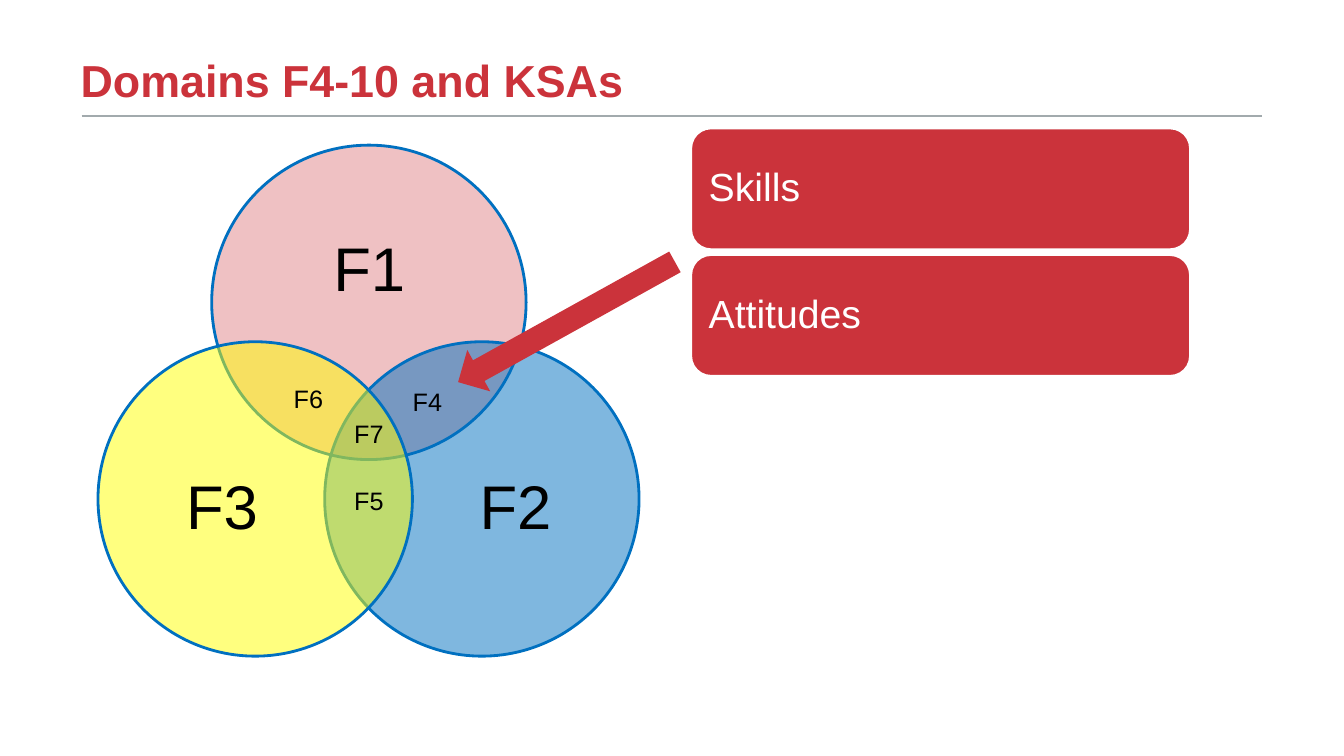
"""Build the slide that links the overlapping domains to skills and attitudes."""
from lxml import etree
from pptx import Presentation
from pptx.dml.color import RGBColor
from pptx.enum.shapes import MSO_CONNECTOR, MSO_SHAPE
from pptx.enum.text import MSO_ANCHOR, PP_ALIGN
from pptx.oxml.ns import qn
from pptx.util import Pt

RED = RGBColor(0xCB, 0x33, 0x3B)
PINK = RGBColor(0xE0, 0x84, 0x89)
BLUE = RGBColor(0x00, 0x70, 0xC0)
YELLOW = RGBColor(0xFF, 0xFF, 0x00)
GRAY = RGBColor(0xA2, 0xAA, 0xAD)
WHITE = RGBColor(0xFF, 0xFF, 0xFF)
BLACK = RGBColor(0x00, 0x00, 0x00)

STRAIGHT = MSO_CONNECTOR.STRAIGHT
CARD = MSO_SHAPE.ROUNDED_RECTANGLE
CIRCLE = MSO_SHAPE.OVAL
ARROW = MSO_SHAPE.RIGHT_ARROW
LEFT, CENTER = PP_ALIGN.LEFT, PP_ALIGN.CENTER
MIDDLE, BOTTOM = MSO_ANCHOR.MIDDLE, MSO_ANCHOR.BOTTOM


class SlideBuilder:
    """Hold the style and the current slide, and draw each kind of element."""

    font_name = "Arial"
    outline_width = 2

    def __init__(self, slide):
        """Keep the slide to draw on."""
        self.slide = slide

    def label(self, shape, text, size, color=BLACK, bold=False, align=CENTER,
              anchor=MIDDLE, inset=0, spacing=0.9, wrap=True):
        """Put one formatted paragraph into a shape."""
        frame = shape.text_frame
        frame_format = {"word_wrap": wrap, "vertical_anchor": anchor}
        for side in ("left", "top", "right", "bottom"):
            frame_format[f"margin_{side}"] = Pt(inset)
        for name, value in frame_format.items():
            setattr(frame, name, value)
        paragraph = frame.paragraphs[0]
        paragraph.text = text
        paragraph.alignment = align
        paragraph.line_spacing = spacing
        font_format = {"name": self.font_name, "size": Pt(size), "bold": bold}
        for name, value in font_format.items():
            setattr(paragraph.font, name, value)
        paragraph.font.color.rgb = color

    def text(self, box, text, size, **style):
        """Add a text box."""
        shape = self.slide.shapes.add_textbox(*map(Pt, box))
        self.label(shape, text, size, **style)

    def shape(self, kind, box, fill, outline=None, opacity=100, rotation=0):
        """Add a filled preset shape."""
        shape = self.slide.shapes.add_shape(kind, *map(Pt, box))
        shape.shadow.inherit = False
        shape.rotation = rotation
        shape.fill.solid()
        shape.fill.fore_color.rgb = fill
        if opacity < 100:
            color = shape.element.spPr.find(qn("a:solidFill"))[0]
            etree.SubElement(color, qn("a:alpha"), val=str(opacity * 1000))
        if outline is None:
            shape.line.fill.background()
        else:
            shape.line.color.rgb = outline
            shape.line.width = Pt(self.outline_width)
        return shape

    def rule(self, left, right, top):
        """Add a thin horizontal line."""
        line = self.slide.shapes.add_connector(
            STRAIGHT, Pt(left), Pt(top), Pt(right), Pt(top))
        line.line.color.rgb = GRAY
        line.line.width = Pt(1)
        etree.SubElement(line.element.spPr, qn("a:effectLst"))


def main():
    """Draw the slide and save it."""
    presentation = Presentation()
    presentation.slide_width = Pt(960)
    presentation.slide_height = Pt(540)
    slide = presentation.slides.add_slide(presentation.slide_layouts[6])
    builder = SlideBuilder(slide)

    builder.rule(58.3, 901.4, 82.8)
    builder.text((57.6, 41.8, 712, 33.8), "Domains F4-10 and KSAs", 32,
                 color=RED, bold=True, align=LEFT, anchor=BOTTOM, spacing=0.8)

    for row, heading in enumerate(("Skills", "Attitudes")):
        card = builder.shape(CARD, (493.4, 91.4 + row * 90.4, 357, 87), RED, WHITE)
        builder.label(card, heading, 28, color=WHITE, align=LEFT, inset=8.64)

    diameter = 224.6
    domains = (
        ("F1", PINK, 151.2, 103.7, (181.4, 143.3, 164.9, 100.8)),
        ("F2", BLUE, 231.9, 244.1, (301, 302.4, 134.6, 123.8)),
        ("F3", YELLOW, 70, 244.1, (91.4, 302.4, 134.6, 123.8)),
    )
    for name, color, left, top, label_box in domains:
        builder.shape(CIRCLE, (left, top, diameter, diameter), color, BLUE, opacity=50)
        builder.text(label_box, name, 44)

    builder.shape(ARROW, (316.1, 213.1, 177.1, 33.8), RED, rotation=151)

    overlaps = (("F7", 245.5, 295.2), ("F6", 202.3, 270),
                ("F4", 287.3, 272.2), ("F5", 245.5, 343.4))
    for name, left, top in overlaps:
        builder.text((left, top, 36, 28.8), name, 18, spacing=1, wrap=False)

    presentation.save("out.pptx")


if __name__ == "__main__":
    main()
